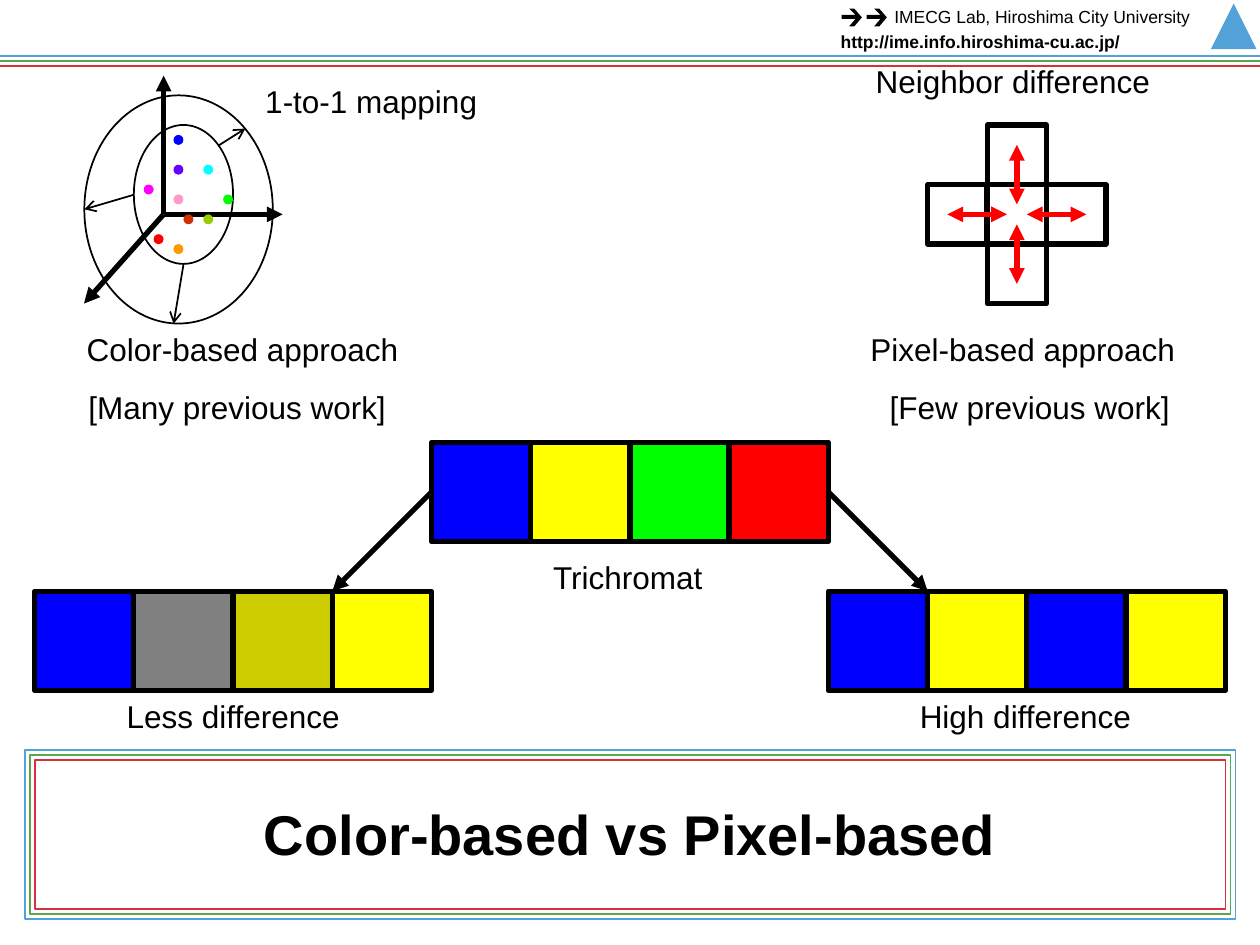
from dataclasses import dataclass

from lxml.etree import SubElement
from pptx import Presentation
from pptx.dml.color import RGBColor
from pptx.enum.shapes import MSO_CONNECTOR, MSO_SHAPE
from pptx.enum.text import MSO_ANCHOR, MSO_AUTO_SIZE, PP_ALIGN
from pptx.oxml.ns import qn
from pptx.util import Pt


@dataclass(frozen=True)
class Theme:
    font: str = "Arial"
    ink: str = "000000"
    sky: str = "53A2D7"
    leaf: str = "58A84B"
    crimson: str = "D43238"
    blue: str = "0000FF"
    yellow: str = "FFFF00"
    green: str = "00FF00"
    red: str = "FF0000"
    gray: str = "808080"
    olive: str = "CCCC00"
    orange: str = "FF9900"
    magenta: str = "FF00FF"
    cyan: str = "00FFFF"
    violet: str = "6600FF"
    pink: str = "FF99CC"
    rust: str = "CC3300"
    lime: str = "99CC00"
    title: int = 32
    label: int = 18
    header: int = 10
    thin: int = 1
    thick: int = 3


theme = Theme()
prs = Presentation()
prs.slide_width, prs.slide_height = Pt(720), Pt(540)
s = prs.slides.add_slide(prs.slide_layouts[6])


def add_shape(kind, x, y, w, h, fill=None, line=None, width=theme.thin):
    sp = s.shapes.add_shape(kind, Pt(x), Pt(y), Pt(w), Pt(h))
    sp.shadow.inherit = False
    if fill:
        sp.fill.solid()
        sp.fill.fore_color.rgb = RGBColor.from_string(fill)
    else:
        sp.fill.background()
    if line:
        sp.line.color.rgb = RGBColor.from_string(line)
        sp.line.width = Pt(width)
    else:
        sp.line.fill.background()
    return sp


def add_line(x1, y1, x2, y2, color=theme.ink, width=theme.thick, head=None, tail=None):
    """Draw a straight line; head is the arrowhead at its start, tail at its end."""
    cxn = s.shapes.add_connector(MSO_CONNECTOR.STRAIGHT, Pt(x1), Pt(y1), Pt(x2), Pt(y2))
    cxn.line.color.rgb = RGBColor.from_string(color)
    cxn.line.width = Pt(width)
    ln = cxn.line._get_or_add_ln()
    for tag, arrow in (("a:headEnd", head), ("a:tailEnd", tail)):
        if arrow:
            SubElement(ln, qn(tag), type=arrow)
    SubElement(cxn._element.spPr, qn("a:effectLst"))
    return cxn


# Header: three rules, two arrow marks and a plain emblem
bands = (theme.sky, theme.leaf, theme.crimson)
for i, color in enumerate(bands):
    add_line(0, 32 + 2.85 * i, 720, 32 + 2.85 * i, color, theme.thin)

arrow_outline = [(4.3, 10.1), (7.9, 5.8), (0, 5.8), (0, 3.6), (7.9, 3.6),
                 (4.3, 0), (7.2, 0), (11.5, 5), (7.2, 10.1)]
for left in (481, 495.3):
    points = [(Pt(left + x), Pt(5 + y)) for x, y in arrow_outline]
    builder = s.shapes.build_freeform(*points[0], scale=1.0)
    builder.add_line_segments(points[1:], close=True)
    sp = builder.convert_to_shape()
    sp.shadow.inherit = False
    sp.fill.solid()
    sp.fill.fore_color.rgb = RGBColor.from_string(theme.ink)
    sp.line.fill.background()

add_shape(MSO_SHAPE.ISOSCELES_TRIANGLE, 692, 2, 26, 26, theme.sky)

# Title frame, outermost first
for i, color in enumerate(bands):
    inset = 2.85 * i
    add_shape(MSO_SHAPE.RECTANGLE, 14.2 + inset, 428.5 + inset,
              691.8 - 2 * inset, 96.6 - 2 * inset, line=color)

# Colour space: axes, inner and outer gamut, sample colours
unit = 5.67
origin_x, origin_y = 93.5, 122.5
for x, y in ((48, 173.5), (161.5, origin_y), (origin_x, 43.2)):
    add_line(origin_x, origin_y, x, y, tail="triangle")
add_shape(MSO_SHAPE.OVAL, 76.5, 71.4, 56.7, 79.4, line=theme.ink)
add_shape(MSO_SHAPE.OVAL, 48.2, 54.5, 107.7, 130.4, line=theme.ink)
for ends in ((124.7, 83.3, 140.2, 73.5), (104.9, 151, 99.2, 185), (76.5, 111.3, 48.2, 119.6)):
    add_line(*ends, width=theme.thin, tail="arrow")

samples = [(-1, 2, theme.red), (6, -2, theme.green), (1, -8, theme.blue),
           (1, 3, theme.orange), (-2, -3, theme.magenta), (4, -5, theme.cyan),
           (1, -5, theme.violet), (1, -2, theme.pink), (2, 0, theme.rust),
           (4, 0, theme.lime)]
for col, row, color in samples:
    add_shape(MSO_SHAPE.OVAL, origin_x + col * unit, origin_y + row * unit,
              unit, unit, color)

# Pixel cross: a centre pixel, four neighbours and the arrows between them
pixel = 34
cross_x, cross_y = 581.1, 122.5
directions = [(0, -1), (-1, 0), (1, 0), (0, 1)]
for dx, dy in [(0, 0)] + directions:
    add_shape(MSO_SHAPE.RECTANGLE, cross_x + (dx - 0.5) * pixel,
              cross_y + (dy - 0.5) * pixel, pixel, pixel,
              line=theme.ink, width=theme.thick)
for dx, dy in directions:
    add_line(cross_x + dx * unit, cross_y + dy * unit,
             cross_x + 7 * dx * unit, cross_y + 7 * dy * unit,
             theme.red, head="triangle", tail="triangle")

# Colour strips: the trichromat view and the two results
cell = 56.7
strip_x, strip_y = 360 - 2 * cell, 252.8
result_y = strip_y + 1.5 * cell
strips = [
    (strip_x, strip_y, (theme.blue, theme.yellow, theme.green, theme.red)),
    (strip_x - 4 * cell, result_y, (theme.blue, theme.gray, theme.olive, theme.yellow)),
    (strip_x + 4 * cell, result_y, (theme.blue, theme.yellow) * 2),
]
cells = [
    add_shape(MSO_SHAPE.RECTANGLE, x + i * cell, y, cell, cell, color,
              theme.ink, theme.thick)
    for x, y, colors in strips for i, color in enumerate(colors)
]
middle_y = strip_y + cell / 2
for start_x, end_x, source, site in (
        (strip_x, strip_x - cell, cells[0], 1),
        (strip_x + 4 * cell, strip_x + 5 * cell, cells[3], 3)):
    cxn = add_line(start_x, middle_y, end_x, result_y, tail="triangle")
    cxn.begin_connect(source, site)

# Text: wording, left, top, width, height, size, bold
label_h, header_h = 29, 19.4
texts = [
    ("IMECG Lab, Hiroshima City University", 504, 0, 185, header_h, theme.header, False),
    ("http://ime.info.hiroshima-cu.ac.jp/", 473.3, 14.4, 198.7, header_h, theme.header, True),
    ("1-to-1 mapping", 144.5, 43.4, 136.8, label_h, theme.label, False),
    ("Neighbor difference", 493.3, 32, 172.8, label_h, theme.label, False),
    ("Color-based approach", 42.5, 185, 194.4, label_h, theme.label, False),
    ("Pixel-based approach", 490.3, 185, 190, label_h, theme.label, False),
    ("[Many previous work]", 43.4, 218.3, 186.5, label_h, theme.label, False),
    ("[Few previous work]", 501.3, 218.3, 176.4, label_h, theme.label, False),
    ("Less difference", 65.3, 394.7, 137.5, label_h, theme.label, False),
    ("High difference", 518.5, 394.7, 136, label_h, theme.label, False),
    ("Trichromat", 309, 315.4, 100.8, label_h, theme.label, False),
    ("Color-based vs Pixel-based", 19.8, 434.2, 680.4, 84.2, theme.title, True),
]
for text, x, y, w, h, size, bold in texts:
    tf = s.shapes.add_textbox(Pt(x), Pt(y), Pt(w), Pt(h)).text_frame
    tf.word_wrap = size != theme.label
    p = tf.paragraphs[0]
    p.text = text
    p.font.name = theme.font
    p.font.size = Pt(size)
    p.font.bold = bold
    p.font.color.rgb = RGBColor.from_string(theme.ink)
    if size == theme.title:
        tf.vertical_anchor = MSO_ANCHOR.MIDDLE
        p.alignment = PP_ALIGN.CENTER
    else:
        tf.auto_size = MSO_AUTO_SIZE.SHAPE_TO_FIT_TEXT

prs.save("out.pptx")
